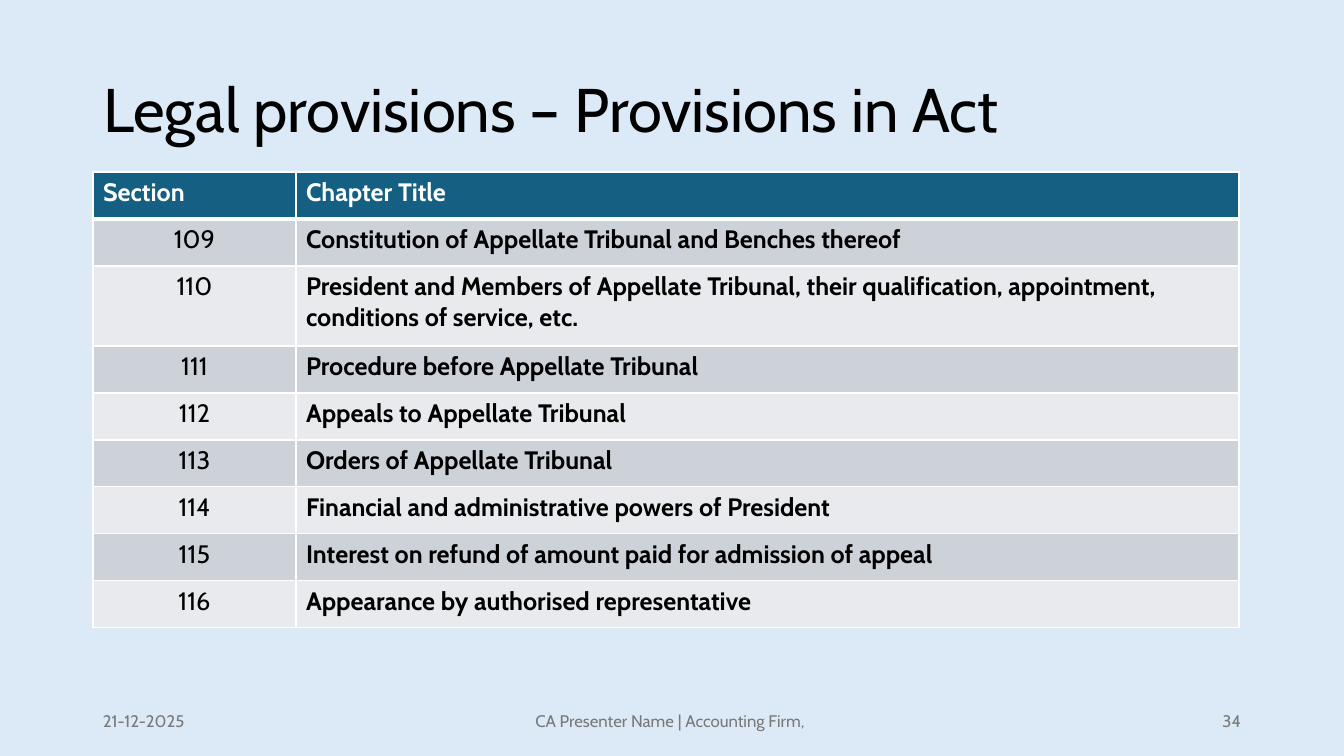
from dataclasses import dataclass

from lxml.etree import SubElement
from pptx import Presentation
from pptx.dml.color import RGBColor as RGB
from pptx.enum.text import MSO_ANCHOR as ANCHOR, PP_ALIGN as ALIGN
from pptx.oxml.ns import qn
from pptx.util import Emu, Pt

SECTIONS = [
    "Constitution of Appellate Tribunal and Benches thereof",
    "President and Members of Appellate Tribunal, their qualification, "
    "appointment, conditions of service, etc.",
    "Procedure before Appellate Tribunal",
    "Appeals to Appellate Tribunal",
    "Orders of Appellate Tribunal",
    "Financial and administrative powers of President",
    "Interest on refund of amount paid for admission of appeal",
    "Appearance by authorised representative",
]
FIRST_SECTION = 109
COLUMNS = (203, 943)
ROW, TALL_ROW, TALL_INDEX = 47, 80, 2


@dataclass(frozen=True)
class Theme:
    """Hold the colours, font and type sizes of the slide."""
    font: str = "Cabin"
    background: str = "DCEAF7"
    ink: str = "000000"
    white: str = "FFFFFF"
    muted: str = "797979"
    header: str = "156082"
    bands: tuple = ("CCD2D8", "E8EAED")
    title_size: int = 44
    table_size: int = 18
    footer_size: int = 12


THEME = Theme()


def px(n):
    """Turn pixels into EMU."""
    return Emu(round(n * 914400 / 100.8))


def place(s, left, top, width, height):
    """Move and size a shape in pixels."""
    s.left, s.top, s.width, s.height = map(px, (left, top, width, height))


def write(tf, text, size, color, align=ALIGN.LEFT, bold=False):
    """Set one formatted paragraph in a text frame."""
    tf.text = text
    p = tf.paragraphs[0]
    p.alignment = align
    font = p.runs[0].font
    font.name, font.size, font.bold = THEME.font, Pt(size), bold
    font.color.rgb = RGB.from_string(color)
    return p


def add_title(slide, text):
    """Fill and place the title placeholder."""
    s = slide.shapes.title
    place(s, 93, 40, 1159, 146)
    s.text_frame.vertical_anchor = ANCHOR.MIDDLE
    p = write(s.text_frame, text, THEME.title_size, THEME.ink)
    p.line_spacing = 0.9


def set_borders(cell, top, bottom):
    """Draw white borders with the given top and bottom widths in points."""
    tcPr = cell._tc.get_or_add_tcPr()
    for side, width in (("L", 1), ("R", 1), ("T", top), ("B", bottom)):
        ln = SubElement(tcPr, qn(f"a:ln{side}"), w=str(Pt(width)))
        fill = SubElement(ln, qn("a:solidFill"))
        SubElement(fill, qn("a:srgbClr"), val=THEME.white)


def fill_cell(cell, text, fill, color, align, bold):
    """Write a table cell and set its fill."""
    write(cell.text_frame, text, THEME.table_size, color, align, bold)
    cell.fill.solid()
    cell.fill.fore_color.rgb = RGB.from_string(fill)


def add_sections(slide):
    """Add the table of sections and chapter titles."""
    rows = [("Section", "Chapter Title")]
    rows += [(str(n), title) for n, title in enumerate(SECTIONS, FIRST_SECTION)]
    heights = [TALL_ROW if i == TALL_INDEX else ROW for i in range(len(rows))]
    table = slide.shapes.add_table(
        len(rows), len(COLUMNS), px(93), px(172),
        px(sum(COLUMNS)), px(sum(heights))).table
    for column, width in zip(table.columns, COLUMNS):
        column.width = px(width)
    for i, row in enumerate(rows):
        table.rows[i].height = px(heights[i])
        is_header = i == 0
        fill = THEME.header if is_header else THEME.bands[(i - 1) % 2]
        color = THEME.white if is_header else THEME.ink
        for j, text in enumerate(row):
            is_number = j == 0 and not is_header
            cell = table.cell(i, j)
            set_borders(cell, 3 if i == 1 else 1, 3 if is_header else 1)
            fill_cell(cell, text, fill, color,
                      ALIGN.CENTER if is_number else ALIGN.LEFT, not is_number)


def add_footer(slide, text, left, width, align):
    """Add one muted footer text."""
    s = slide.shapes.add_textbox(px(left), px(701), px(width), px(40))
    tf = s.text_frame
    tf.word_wrap = True
    tf.vertical_anchor = ANCHOR.MIDDLE
    write(tf, text, THEME.footer_size, THEME.muted, align)


def main():
    """Build and save the slide."""
    prs = Presentation()
    prs.slide_width, prs.slide_height = px(1344), px(756)
    slide = prs.slides.add_slide(prs.slide_layouts[5])
    slide.background.fill.solid()
    slide.background.fill.fore_color.rgb = RGB.from_string(THEME.background)
    add_title(slide, "Legal provisions – Provisions in Act")
    add_sections(slide)
    add_footer(slide, "21-12-2025", 93, 302, ALIGN.LEFT)
    add_footer(slide, "CA Presenter Name | Accounting Firm, ", 445, 454, ALIGN.CENTER)
    add_footer(slide, "34", 949, 302, ALIGN.RIGHT)
    prs.save("out.pptx")


if __name__ == "__main__":
    main()
